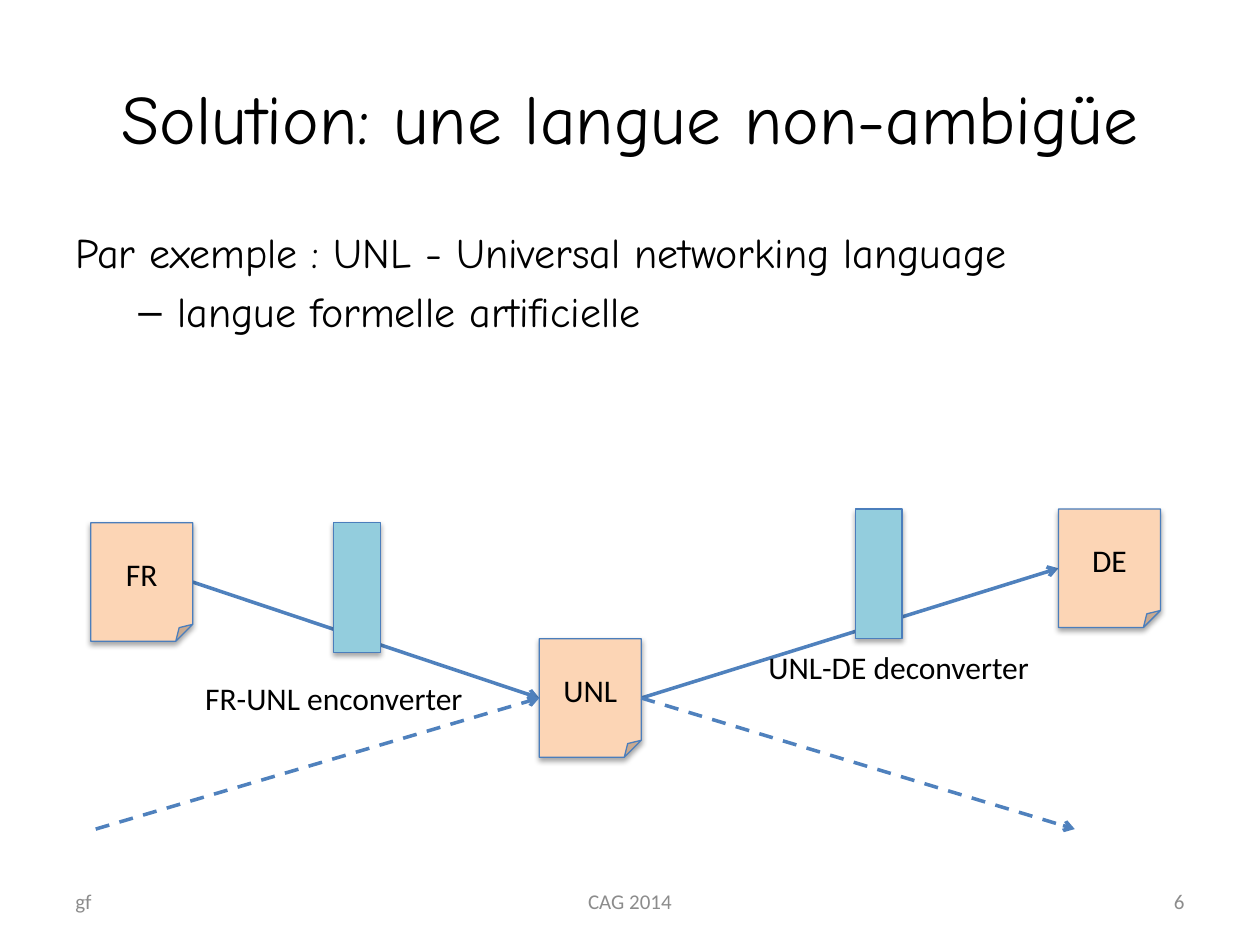
from lxml import etree
from pptx import Presentation
from pptx.dml.color import RGBColor
from pptx.enum.dml import MSO_LINE
from pptx.enum.shapes import MSO_CONNECTOR, MSO_SHAPE
from pptx.enum.text import MSO_ANCHOR, MSO_AUTO_SIZE, PP_ALIGN
from pptx.oxml.ns import qn
from pptx.util import Inches, Pt

LEFT, CENTER, RIGHT = PP_ALIGN.LEFT, PP_ALIGN.CENTER, PP_ALIGN.RIGHT
TOP, MIDDLE = MSO_ANCHOR.TOP, MSO_ANCHOR.MIDDLE
NO_FIT, GROW = MSO_AUTO_SIZE.NONE, MSO_AUTO_SIZE.SHAPE_TO_FIT_TEXT
NOTE, BLOCK = MSO_SHAPE.FOLDED_CORNER, MSO_SHAPE.RECTANGLE
STRAIGHT, DASH = MSO_CONNECTOR.STRAIGHT, MSO_LINE.DASH
TITLE_ONLY = 5

COLUMNS, ROWS = 100, 75
CELL = Inches(0.1)
HAND, SANS = "Comic Neue", "Calibri"
COLORS = {
    "text": "000000",
    "footer": "8C8C8C",
    "note": "FCD5B5",
    "converter": "93CDDD",
    "outline": "4B7EBC",
    "link": "4F81BD",
    "shadow": "000000",
}


def color(name):
    return RGBColor.from_string(COLORS[name])


def cells(values):
    return [round(value * CELL) for value in values]


def apply(target, values):
    for name, value in values.items():
        setattr(target, name, value)


def write(para, text, font, size, ink="text", **layout):
    apply(para, layout)
    span = para.add_run()
    span.text = text
    apply(span.font, {"name": font, "size": Pt(size)})
    span.font.color.rgb = color(ink)


def add_text(page, box, anchor=TOP, wrap=True, fit=NO_FIT):
    frame = page.shapes.add_textbox(*cells(box)).text_frame
    apply(frame, {"vertical_anchor": anchor, "word_wrap": wrap, "auto_size": fit})
    return frame


def add_title(page, box, text):
    title = page.shapes.title
    apply(title, dict(zip(("left", "top", "width", "height"), cells(box))))
    frame = title.text_frame
    apply(frame, {"vertical_anchor": MIDDLE, "word_wrap": True, "auto_size": NO_FIT})
    write(frame.paragraphs[0], text, HAND, 39.6, alignment=CENTER)


def add_body(page, box, heading, detail):
    frame = add_text(page, box)
    gap = Pt(4.8)
    write(frame.paragraphs[0], heading, HAND, 24, space_before=gap)
    para = frame.add_paragraph()
    write(para, detail, HAND, 24, space_before=gap, level=1)
    properties = para._p.get_or_add_pPr()
    properties.set("marL", str(Inches(0.81)))
    properties.set("indent", str(Inches(-0.31)))
    etree.SubElement(properties, qn("a:buFont"), typeface="Arial")
    etree.SubElement(properties, qn("a:buChar"), char="–")


def add_footer(page, box, texts):
    left, top, width, height = box
    side, middle = 23.3, 31.7
    places = (
        (left, side, LEFT),
        (left + (width - middle) / 2, middle, CENTER),
        (left + width - side, side, RIGHT),
    )
    for text, (start, span, alignment) in zip(texts, places):
        frame = add_text(page, (start, top, span, height), MIDDLE)
        write(frame.paragraphs[0], text, SANS, 12, "footer", alignment=alignment)


def add_block(page, kind, box, fill, text=None):
    block = page.shapes.add_shape(kind, *cells(box))
    block.fill.solid()
    block.fill.fore_color.rgb = color(fill)
    block.line.color.rgb = color("outline")
    block.line.width = Pt(0.75)
    block.shadow.inherit = False
    effects = block._element.spPr.find(qn("a:effectLst"))
    shadow = etree.SubElement(
        effects, qn("a:outerShdw"), blurRad=str(Pt(3.1)), dist=str(Pt(1.8)),
        dir="5400000", rotWithShape="0",
    )
    shade = etree.SubElement(shadow, qn("a:srgbClr"), val=COLORS["shadow"])
    etree.SubElement(shade, qn("a:alpha"), val="35000")
    if text:
        block.text_frame.vertical_anchor = MIDDLE
        write(block.text_frame.paragraphs[0], text, SANS, 18, alignment=CENTER)


def add_link(page, start, end, dashed=False):
    link = page.shapes.add_connector(STRAIGHT, *cells((*start, *end)))
    link.line.color.rgb = color("link")
    link.line.width = Pt(2)
    if dashed:
        link.line.dash_style = DASH
    etree.SubElement(link.line._get_or_add_ln(), qn("a:tailEnd"), type="arrow")
    etree.SubElement(link._element.spPr, qn("a:effectLst"))


def add_diagram(page, box):
    left, top, width, height = box
    note_width, note_height = 8.1, 9.4
    block_width, block_height = 3.7, 10.3
    source = (left, top + 1.1)
    pivot = (left + 35.6, top + block_height)
    target = (left + width - note_width, top)

    def entry(note):
        return note[0], note[1] + note_height / 2

    def departure(note):
        return note[0] + note_width, note[1] + note_height / 2

    add_link(page, departure(source), entry(pivot))
    add_link(page, departure(pivot), entry(target))
    for text, place in (("FR", source), ("DE", target), ("UNL", pivot)):
        add_block(page, NOTE, (*place, note_width, note_height), "note", text)

    converters = (
        ("FR-UNL enconverter", (left + 19.3, source[1]), (left + 8.1, top + 13)),
        ("UNL-DE deconverter", (left + 60.7, target[1]), (left + 52.8, top + 10.5)),
    )
    for text, place, caption in converters:
        add_block(page, BLOCK, (*place, block_width, block_height), "converter")
        frame = add_text(page, (*caption, 23, 4), wrap=False, fit=GROW)
        write(frame.paragraphs[0], text, SANS, 18)

    bottom = top + height
    add_link(page, departure(pivot), (left + 78.1, bottom), dashed=True)
    add_link(page, (left + 0.4, bottom), entry(pivot), dashed=True)


def main():
    deck = Presentation()
    deck.slide_width, deck.slide_height = COLUMNS * CELL, ROWS * CELL
    page = deck.slides.add_slide(deck.slide_layouts[TITLE_ONLY])
    margin = 5
    width = COLUMNS - 2 * margin
    add_title(page, (margin, 3, width, 12.5), "Solution: une langue non-ambigüe")
    add_body(
        page, (margin, 17.5, width, 26.1),
        "Par exemple : UNL - Universal networking language",
        "langue formelle artificielle",
    )
    add_footer(page, (margin, 69.5, width, 4), ("gf", "CAG 2014", "6"))
    add_diagram(page, (7.2, 40.4, 84.9, 25.4))
    deck.save("out.pptx")


if __name__ == "__main__":
    main()
